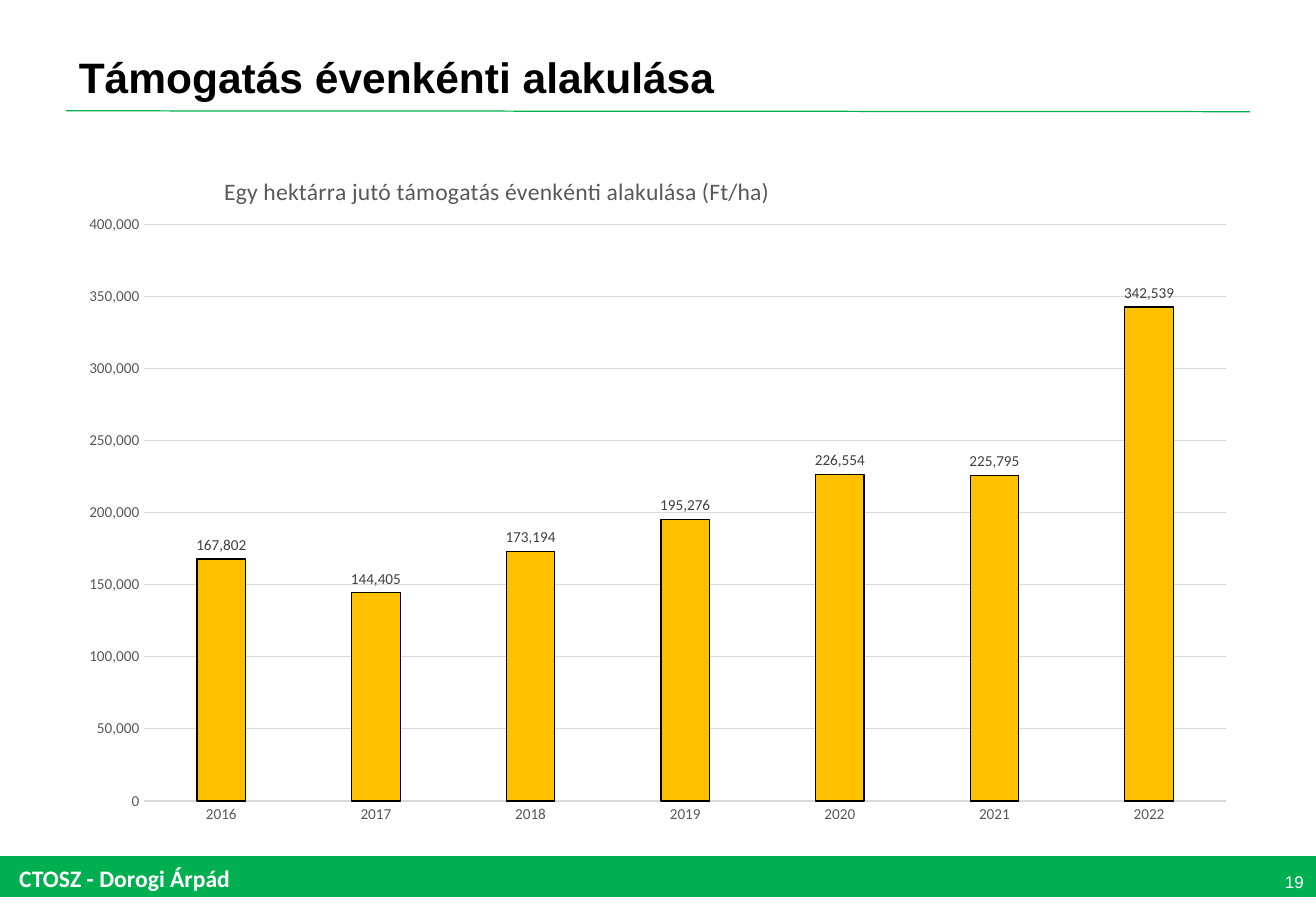
from lxml import etree
from pptx import Presentation
from pptx.chart.data import CategoryChartData
from pptx.dml.color import RGBColor
from pptx.enum.chart import XL_CHART_TYPE as ChartType, XL_LABEL_POSITION as LabelPos, XL_TICK_MARK as Tick
from pptx.enum.shapes import MSO_CONNECTOR as Connector, MSO_SHAPE as Shape
from pptx.enum.text import MSO_ANCHOR as Anchor, PP_ALIGN as Align
from pptx.oxml import parse_xml
from pptx.oxml.ns import nsdecls, qn
from pptx.util import Pt

TITLE = "Támogatás évenkénti alakulása"
CHART_TITLE = "Egy hektárra jutó támogatás évenkénti alakulása (Ft/ha)"
FOOTER = "CTOSZ - Dorogi Árpád"
PAGE = "19"
SUPPORT = {"2016": 167802, "2017": 144405, "2018": 173194, "2019": 195276,
           "2020": 226554, "2021": 225795, "2022": 342539}
COLORS = {"green": "00B050", "bar": "FFC000", "grid": "D9D9D9", "axis": "595959",
          "label": "404040", "black": "000000", "white": "FFFFFF"}
WIDTH, HEIGHT = 780, 540
FOOTER_TOP = 508.5
PLOT_LAYOUT = {"x": 0.066, "y": 0.121, "w": 0.913, "h": 0.826}
TITLE_LAYOUT = {"x": 0.13, "y": 0.045}


def rgb(name):
    return RGBColor.from_string(COLORS[name])


def set_font(font, size, color, name="Calibri", bold=False):
    font.size, font.name, font.bold = Pt(size), name, bold
    font.color.rgb = rgb(color)


def set_line(line, color, width=0.75):
    line.color.rgb = rgb(color)
    line.width = Pt(width)


def add_text(slide, text, box, size, color, align=Align.LEFT, anchor=Anchor.MIDDLE,
             inset=(8.5, 4.25), **font):
    tf = slide.shapes.add_textbox(*map(Pt, box)).text_frame
    tf.word_wrap = True
    tf.vertical_anchor = anchor
    tf.margin_left = tf.margin_right = Pt(inset[0])
    tf.margin_top = tf.margin_bottom = Pt(inset[1])
    p = tf.paragraphs[0]
    p.text = text
    p.alignment = align
    set_font(p.runs[0].font, size, color, **font)


def set_layout(element, layout, target=None):
    """Place a chart part by fractions of the chart area."""
    for old in element.findall(qn("c:layout")):
        element.remove(old)
    inner = f'<c:layoutTarget val="{target}"/>' if target else ""
    modes = "".join(f'<c:{k}Mode val="edge"/>' for k in "xy")
    sizes = "".join(f'<c:{k} val="{v}"/>' for k, v in layout.items())
    node = parse_xml(f'<c:layout {nsdecls("c")}><c:manualLayout>{inner}{modes}{sizes}'
                     '</c:manualLayout></c:layout>')
    text = element.find(qn("c:tx"))
    if text is None:
        element.insert(0, node)
    else:
        text.addnext(node)


def add_support_chart(slide, box):
    data = CategoryChartData(number_format="#,##0")
    data.categories = list(SUPPORT)
    data.add_series("Series 1", list(SUPPORT.values()))
    chart = slide.shapes.add_chart(ChartType.COLUMN_CLUSTERED, *map(Pt, box), data).chart
    set_font(chart.font, 10, "black")
    chart.has_legend = False

    chart.has_title = True
    p = chart.chart_title.text_frame.paragraphs[0]
    p.text = CHART_TITLE
    set_font(p.runs[0].font, 14, "axis")
    chart.chart_title.include_in_layout = False
    set_layout(chart.chart_title.format and chart.element.find(".//" + qn("c:title")), TITLE_LAYOUT)
    set_layout(chart.element.find(".//" + qn("c:plotArea")), PLOT_LAYOUT, "inner")

    for axis in (chart.category_axis, chart.value_axis):
        axis.major_tick_mark = axis.minor_tick_mark = Tick.NONE
        set_font(axis.tick_labels.font, 9, "axis")
    set_line(chart.category_axis.format.line, "grid")
    values = chart.value_axis
    values.minimum_scale, values.maximum_scale, values.major_unit = 0, 400000, 50000
    values.format.line.fill.background()
    set_line(values.major_gridlines.format.line, "grid")
    values.tick_labels.number_format = "#,##0"
    values.tick_labels.number_format_is_linked = False

    plot = chart.plots[0]
    plot.gap_width, plot.overlap, plot.vary_by_categories = 219, -27, False
    bars = plot.series[0]
    bars.format.fill.solid()
    bars.format.fill.fore_color.rgb = rgb("bar")
    set_line(bars.format.line, "black")
    labels = bars.data_labels
    labels.show_value = True
    labels.position = LabelPos.OUTSIDE_END
    set_font(labels.font, 9, "label")


prs = Presentation()
prs.slide_width, prs.slide_height = Pt(WIDTH), Pt(HEIGHT)
s = prs.slides.add_slide(prs.slide_layouts[6])

rule = s.shapes.add_connector(Connector.STRAIGHT, Pt(39), Pt(65.7), Pt(741), Pt(66.2))
set_line(rule.line, "green")
etree.SubElement(rule._element.spPr, qn("a:effectLst"))

band = s.shapes.add_shape(Shape.RECTANGLE, Pt(0), Pt(FOOTER_TOP), Pt(WIDTH), Pt(22.3))
band.shadow.inherit = False
band.fill.solid()
band.fill.fore_color.rgb = rgb("green")
set_line(band.line, "green", 2)

add_text(s, FOOTER, (4.3, FOOTER_TOP, 158.4, 24.5), 14, "white",
         anchor=Anchor.TOP, inset=(7.2, 3.6), bold=True)
add_text(s, TITLE, (38.2, 26, 601, 39), 25.2, "black", name="Arial", bold=True)
add_text(s, PAGE, (749.5, FOOTER_TOP, 31.7, 28.8), 10, "white", align=Align.RIGHT, name="Arial")
add_support_chart(s, (39, 82.8, 702.7, 414))

prs.save("out.pptx")
